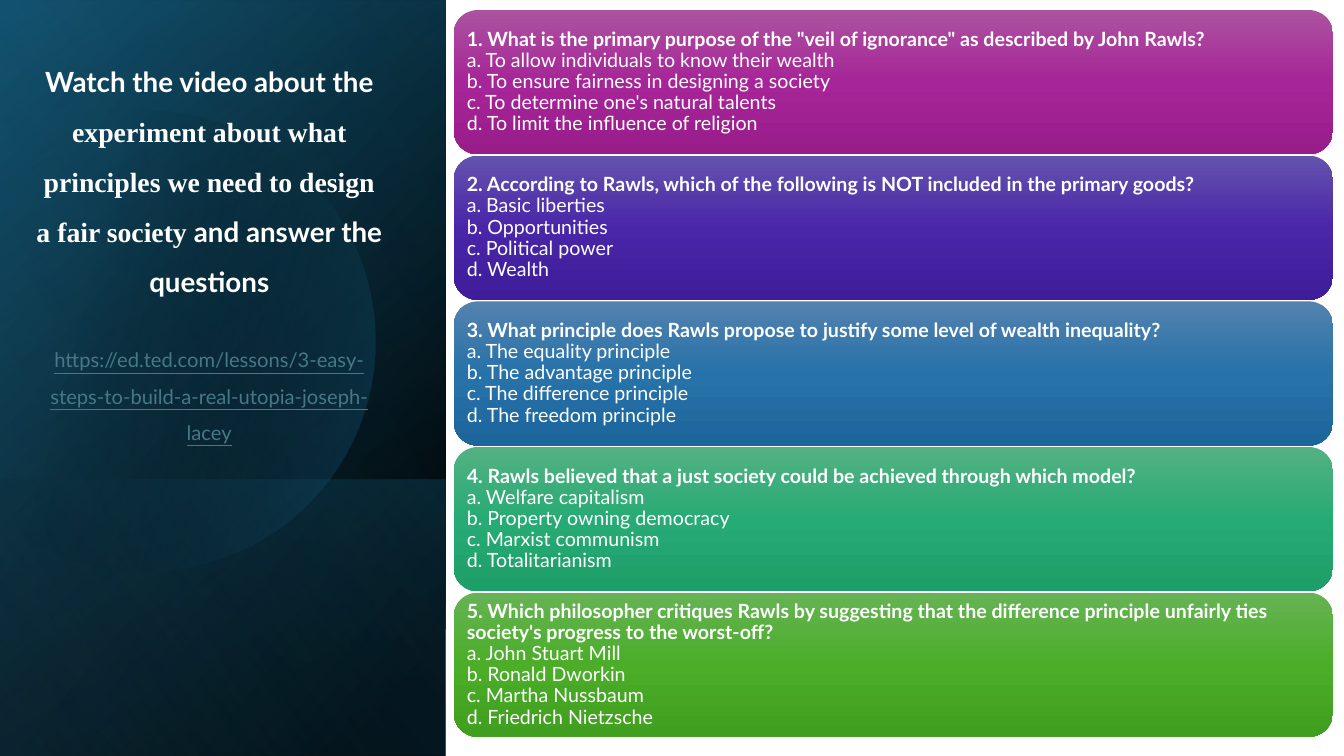
from dataclasses import dataclass

from pptx import Presentation
from pptx.dml.color import RGBColor
from pptx.enum.shapes import MSO_SHAPE
from pptx.enum.text import MSO_ANCHOR, MSO_AUTO_SIZE, PP_ALIGN
from pptx.oxml import parse_xml
from pptx.oxml.ns import nsdecls, qn
from pptx.util import Inches, Pt


@dataclass(frozen=True)
class Theme:
    white: str = "FFFFFF"
    link: str = "467886"
    black: str = "000000"
    teal: str = "156082"
    deep_teal: str = "104862"
    sky: str = "46B1E1"
    sans: str = "Lato"
    serif: str = "Times New Roman"
    title_size: float = 19.8
    link_size: float = 14.4
    card_size: float = 14
    cards: tuple = (
        ("AC53A0", "A62598", "991C8B"),
        ("6553AE", "4926A8", "3E1C9A"),
        ("5382AF", "2772A9", "1D669C"),
        ("54B183", "27AB74", "1E9E68"),
        ("66B354", "4BAD28", "409F1E"),
    )


THEME = Theme()

PANELS_BEHIND = [
    (-1.54, 1.54, 7.5, 50, [(8, THEME.black, 100), (100, THEME.deep_teal, 100)]),
    (-1.54, 1.55, 7.5, 30, [(0, THEME.black, 0), (99, THEME.teal, 46)]),
    (0.84, 3.92, 2.74, 130, [(2, THEME.teal, 29), (100, THEME.black, 30)]),
]
PANEL_GLOW = (-1.54, 1.54, 7.5, 120, [(0, THEME.black, 0), (99, THEME.sky, 11)])

CIRCLE_START = (1.49, 1.1)
CIRCLE_CURVES = [
    ((2.46, 1.12), (3.35, 1.77), (3.63, 2.75)),
    ((3.98, 3.97), (3.28, 5.23), (2.07, 5.58)),
    ((1.31, 5.8), (0.53, 5.61), (-0.03, 5.14)),
    ((-0.15, 5.03), (-0.15, 1.75), (0, 1.61)),
    ((0.23, 1.42), (0.5, 1.28), (0.8, 1.19)),
    ((1.03, 1.13), (1.26, 1.1), (1.49, 1.1)),
]
CIRCLE_STOPS = [(29, THEME.black, 0), (100, THEME.teal, 43)]

TITLE_RUNS = [
    ("Watch the video about the ", THEME.sans),
    ("experiment about what principles we need to design a fair society ", THEME.serif),
    ("and answer the questions", THEME.sans),
]
VIDEO_ADDRESS = "https://ed.ted.com/lessons/3-easy-steps-to-build-a-real-utopia-joseph-lacey"

QUESTIONS = [
    ('1. What is the primary purpose of the "veil of ignorance" as described by John Rawls?',
     "a. To allow individuals to know their wealth",
     "b. To ensure fairness in designing a society",
     "c. To determine one's natural talents",
     "d. To limit the influence of religion"),
    ("2. According to Rawls, which of the following is NOT included in the primary goods?",
     "a. Basic liberties", "b. Opportunities", "c. Political power", "d. Wealth"),
    ("3. What principle does Rawls propose to justify some level of wealth inequality?",
     "a. The equality principle", "b. The advantage principle",
     "c. The difference principle", "d. The freedom principle"),
    ("4. Rawls believed that a just society could be achieved through which model?",
     "a. Welfare capitalism", "b. Property owning democracy",
     "c. Marxist communism", "d. Totalitarianism"),
    ("5. Which philosopher critiques Rawls by suggesting that the difference principle "
     "unfairly ties society's progress to the worst-off?",
     "a. John Stuart Mill", "b. Ronald Dworkin", "c. Martha Nussbaum", "d. Friedrich Nietzsche"),
]
FIRST_CARD_TOP, LAST_CARD_TOP = 0.1, 5.88
CARD_PITCH = (LAST_CARD_TOP - FIRST_CARD_TOP) / (len(QUESTIONS) - 1)


def curve_points(start, first, second, end, steps=24):
    for step in range(1, steps + 1):
        t = step / steps
        weights = ((1 - t) ** 3, 3 * t * (1 - t) ** 2, 3 * t ** 2 * (1 - t), t ** 3)
        corners = (start, first, second, end)
        yield tuple(sum(w * corner[axis] for w, corner in zip(weights, corners))
                    for axis in (0, 1))


class SlideBuilder:
    def __init__(self, slide, theme):
        self.slide = slide
        self.theme = theme

    def paint(self, shape, stops, angle):
        shape.shadow.inherit = False
        shape.line.fill.background()
        shape.fill.gradient()
        stop_list = "".join(
            f'<a:gs pos="{position * 1000}"><a:srgbClr val="{color}">'
            f'<a:alpha val="{opacity * 1000}"/></a:srgbClr></a:gs>'
            for position, color, opacity in stops)
        gradient = parse_xml(
            f'<a:gradFill {nsdecls("a")} rotWithShape="1"><a:gsLst>{stop_list}</a:gsLst>'
            f'<a:lin ang="{angle * 60000}" scaled="0"/></a:gradFill>')
        properties = shape._element.spPr
        properties.replace(properties.find(qn("a:gradFill")), gradient)

    def style(self, font, size, color, bold, name=None):
        font.size = Pt(size)
        font.color.rgb = RGBColor.from_string(color)
        font.bold = bold
        if name:
            font.name = name

    def panel(self, left, top, length, angle, stops):
        shape = self.slide.shapes.add_shape(
            MSO_SHAPE.RECTANGLE, Inches(left), Inches(top), Inches(length), Inches(4.42))
        shape.rotation = 90
        shape._element.spPr.xfrm.set("flipH", "1")
        self.paint(shape, stops, angle)

    def circle(self, start, curves, stops, angle):
        points = [start]
        for index, curve in enumerate(curves):
            if index == 3:
                points.extend(curve)
            else:
                points.extend(curve_points(points[-1], *curve))
        corners = [(Inches(x), Inches(y)) for x, y in points]
        builder = self.slide.shapes.build_freeform(*corners[0])
        builder.add_line_segments(corners[1:], close=True)
        self.paint(builder.convert_to_shape(), stops, angle)

    def title(self, runs, address):
        title = self.slide.shapes.title
        self.slide.shapes._spTree.append(title._element)
        title.left, title.top = Inches(0.24), Inches(1.63)
        title.width, title.height = Inches(3.67), Inches(3.43)
        frame = title.text_frame
        frame.word_wrap = True
        frame.auto_size = MSO_AUTO_SIZE.NONE
        frame.vertical_anchor = MSO_ANCHOR.BOTTOM
        frame.margin_bottom = Inches(0.65)
        heading, link = frame.paragraphs[0], frame.add_paragraph()
        for text, font_name in runs:
            run = heading.add_run()
            run.text = text
            run.font.name = font_name
        link.text = address
        for paragraph in (heading, link):
            paragraph.alignment = PP_ALIGN.CENTER
            paragraph.line_spacing = 1.5
            paragraph.space_before = Pt(0)
        link.space_before = Pt(27)
        self.style(heading.font, self.theme.title_size, self.theme.white, True)
        self.style(link.font, self.theme.link_size, self.theme.link, False, self.theme.sans)
        link.font.underline = True

    def card(self, top, lines, colors):
        shape = self.slide.shapes.add_shape(
            MSO_SHAPE.ROUNDED_RECTANGLE, Inches(4.5), Inches(top), Inches(8.72), Inches(1.43))
        self.paint(shape, [(i * 50, color, 100) for i, color in enumerate(colors)], 90)
        frame = shape.text_frame
        frame.word_wrap = True
        frame.vertical_anchor = MSO_ANCHOR.MIDDLE
        frame.margin_left = frame.margin_right = Inches(0.06)
        frame.margin_top = frame.margin_bottom = Inches(0.06)
        for index, text in enumerate(lines):
            paragraph = frame.add_paragraph() if index else frame.paragraphs[0]
            paragraph.text = text
            paragraph.alignment = PP_ALIGN.LEFT
            paragraph.line_spacing = 0.9
            self.style(paragraph.font, self.theme.card_size, self.theme.white,
                       index == 0, self.theme.sans)


def main():
    presentation = Presentation()
    presentation.slide_width, presentation.slide_height = Inches(13.33), Inches(7.5)
    slide = presentation.slides.add_slide(presentation.slide_layouts[5])
    builder = SlideBuilder(slide, THEME)
    for panel in PANELS_BEHIND:
        builder.panel(*panel)
    builder.circle(CIRCLE_START, CIRCLE_CURVES, CIRCLE_STOPS, 14)
    builder.panel(*PANEL_GLOW)
    builder.title(TITLE_RUNS, VIDEO_ADDRESS)
    for index, (lines, colors) in enumerate(zip(QUESTIONS, THEME.cards)):
        builder.card(FIRST_CARD_TOP + index * CARD_PITCH, lines, colors)
    presentation.save("out.pptx")


if __name__ == "__main__":
    main()
